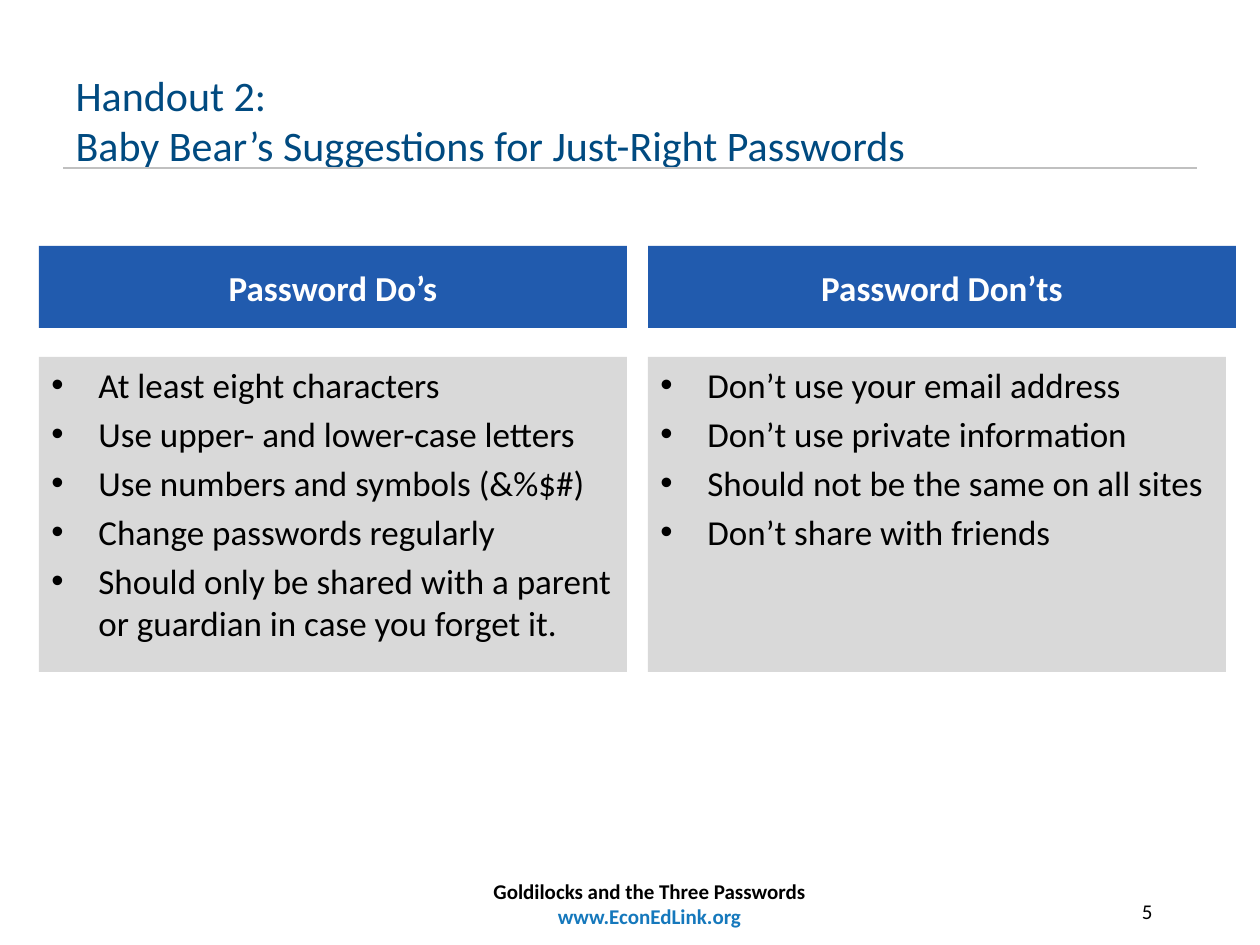
from dataclasses import dataclass

from lxml.etree import SubElement
from pptx import Presentation
from pptx.dml.color import RGBColor as RGB
from pptx.enum.shapes import MSO_CONNECTOR as Connector, MSO_SHAPE as Shape
from pptx.enum.text import MSO_ANCHOR as Anchor, PP_ALIGN as Align
from pptx.oxml.ns import qn
from pptx.util import Pt


@dataclass(frozen=True)
class Theme:
    font: str = "Calibri"
    title: RGB = RGB(0x00, 0x4A, 0x80)
    header: RGB = RGB(0x21, 0x5B, 0xAE)
    panel: RGB = RGB(0xD9, 0xD9, 0xD9)
    rule: RGB = RGB(0xC0, 0xC0, 0xC0)
    link: RGB = RGB(0x15, 0x78, 0xBC)
    black: RGB = RGB(0, 0, 0)
    white: RGB = RGB(255, 255, 255)
    title_size: int = 24
    body_size: int = 20
    footer_size: int = 12


theme = Theme()
PX = 914400 / 126


def px(*lengths):
    """Turn pixel lengths into EMU."""
    return [round(length * PX) for length in lengths]


def style(para, size, color, align=Align.LEFT, bold=False):
    para.alignment = align
    for span in para.runs:
        span.font.name = theme.font
        span.font.size = Pt(size)
        span.font.bold = bold
        span.font.color.rgb = color


deck = Presentation()
deck.slide_width, deck.slide_height = px(1260, 945)
page = deck.slides.add_slide(deck.slide_layouts[5])

# Rule under the title
rule = page.shapes.add_connector(Connector.STRAIGHT, *px(63, 168, 1197, 168))
rule.line.color.rgb = theme.rule
rule.line.width = Pt(1.25)
SubElement(rule._element.spPr, qn("a:effectLst"))

# Title
title = page.shapes.title
title.left, title.top, title.width, title.height = px(63, 63, 1134, 84)
title.text_frame.text = "Handout 2:\vBaby Bear’s Suggestions for Just-Right Passwords"
title.text_frame.vertical_anchor = Anchor.TOP
style(title.text_frame.paragraphs[0], theme.title_size, theme.title)

# Two columns: header bar above a bulleted panel
columns = [
    (39, 588, "Password Do’s", [
        "At least eight characters",
        "Use upper- and lower-case letters",
        "Use numbers and symbols (&%$#)",
        "Change passwords regularly",
        "Should only be shared with a parent or guardian in case you forget it.",
    ]),
    (648, 578, "Password Don’ts", [
        "Don’t use your email address",
        "Don’t use private information",
        "Should not be the same on all sites",
        "Don’t\u00a0share with friends",
    ]),
]
indent, = px(47)
for left, panel_width, heading, rules in columns:
    header = page.shapes.add_shape(Shape.RECTANGLE, *px(left, 246, 588, 82))
    panel = page.shapes.add_shape(Shape.RECTANGLE, *px(left, 357, panel_width, 315))
    for box, fill in ((header, theme.header), (panel, theme.panel)):
        box.shadow.inherit = False
        box.fill.solid()
        box.fill.fore_color.rgb = fill
        box.line.fill.background()

    header.text_frame.text = heading
    header.text_frame.vertical_anchor = Anchor.MIDDLE
    style(header.text_frame.paragraphs[0], theme.body_size, theme.white, Align.CENTER, True)

    panel.text_frame.text = "\n".join(rules)
    panel.text_frame.vertical_anchor = Anchor.TOP
    for index, para in enumerate(panel.text_frame.paragraphs):
        properties = para._p.get_or_add_pPr()
        properties.set("marL", str(indent))
        properties.set("indent", str(-indent))
        SubElement(properties, qn("a:buFont"), typeface="Arial")
        SubElement(properties, qn("a:buChar"), char="•")
        if index:
            para.space_before = Pt(4)
        style(para, theme.body_size, theme.black)

# Page number and footer
number = page.shapes.add_textbox(*px(903, 892, 262, 63))
number.text_frame.word_wrap = True
number.text_frame.text = "5"
style(number.text_frame.paragraphs[0], theme.footer_size, theme.black, Align.RIGHT)

footer = page.shapes.add_textbox(*px(105, 872, 1089, 63))
footer.text_frame.word_wrap = True
footer.text_frame.text = "Goldilocks and the Three Passwords\nwww.EconEdLink.org"
for para, color in zip(footer.text_frame.paragraphs, (theme.black, theme.link)):
    style(para, theme.footer_size, color, Align.CENTER, True)

deck.save("out.pptx")
